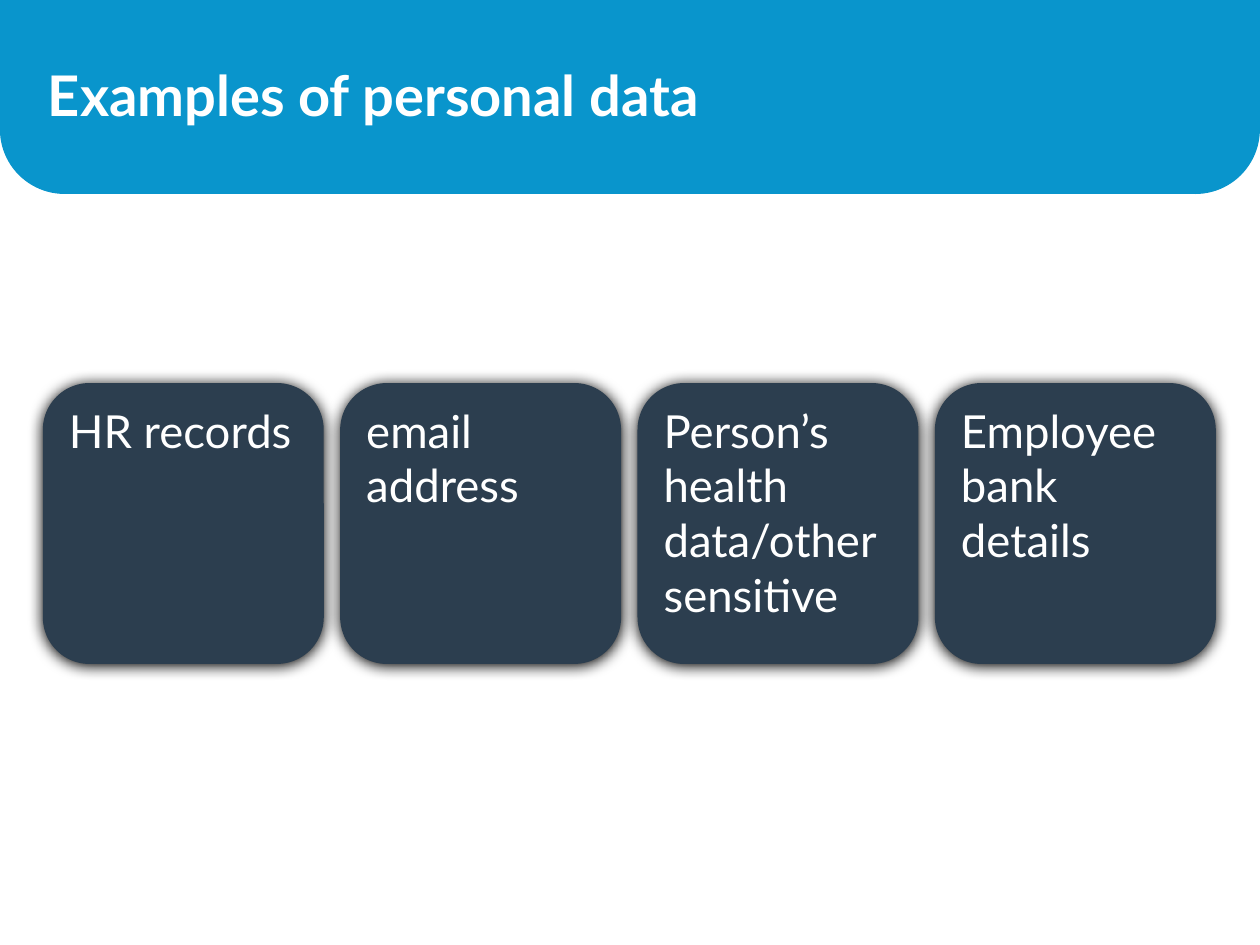
from dataclasses import dataclass

from lxml import etree
from pptx import Presentation
from pptx.dml.color import RGBColor
from pptx.enum.shapes import MSO_SHAPE
from pptx.enum.text import MSO_ANCHOR, PP_ALIGN
from pptx.oxml.ns import qn
from pptx.util import Inches, Pt

ROUND_TOP, ROUNDED = MSO_SHAPE.ROUND_2_SAME_RECTANGLE, MSO_SHAPE.ROUNDED_RECTANGLE
TOP, MIDDLE, LEFT = MSO_ANCHOR.TOP, MSO_ANCHOR.MIDDLE, PP_ALIGN.LEFT
TITLE_ONLY = 5


@dataclass(frozen=True)
class Theme:
    font: str = "Lato"
    banner: RGBColor = RGBColor(0x09, 0x95, 0xCC)
    card: RGBColor = RGBColor(0x2C, 0x3E, 0x4F)
    text: RGBColor = RGBColor(0xFF, 0xFF, 0xFF)
    shadow: str = "000000"
    title_size: int = 32
    card_size: int = 26


THEME = Theme()


def add_run(p, text, size, bold=False):
    p.alignment = LEFT
    r = p.add_run()
    r.text = text
    r.font.name, r.font.size, r.font.bold = THEME.font, Pt(size), bold
    r.font.color.rgb = THEME.text


def add_filled(slide, kind, box, color):
    sp = slide.shapes.add_shape(kind, *map(Inches, box))
    sp.fill.solid()
    sp.fill.fore_color.rgb = color
    sp.line.fill.background()
    sp.shadow.inherit = False
    return sp


def add_glow_shadow(sp):
    effects = sp._element.spPr.find(qn("a:effectLst"))
    shadow = etree.SubElement(effects, qn("a:outerShdw"), blurRad=str(Pt(8.5)),
                              dist=str(Pt(1)), dir=str(90 * 60000), rotWithShape="0")
    etree.SubElement(shadow, qn("a:srgbClr"), val=THEME.shadow)


def add_header(slide, box, text):
    x, y, w, h = box
    # Banner with rounded lower corners, behind the title
    banner = add_filled(slide, ROUND_TOP, box, THEME.banner)
    banner.adjustments[0] = 0.333
    xfrm = banner._element.spPr.find(qn("a:xfrm"))
    xfrm.set("flipH", "1")
    xfrm.set("flipV", "1")
    slide.shapes._spTree.insert(2, banner._element)

    # Title
    title = slide.shapes.title
    title.left, title.top = Inches(x + 0.28), Inches(y + 0.13)
    title.width, title.height = Inches(w - 0.57), Inches(h - 0.31)
    tf = title.text_frame
    tf.vertical_anchor = MIDDLE
    add_run(tf.paragraphs[0], text, THEME.title_size, bold=True)


def add_cards(slide, box, labels, gap):
    x, y, w, h = box
    side = (w - gap * (len(labels) - 1)) / len(labels)
    for i, label in enumerate(labels):
        sp = add_filled(slide, ROUNDED, (x + i * (side + gap), y, side, h), THEME.card)
        add_glow_shadow(sp)
        tf = sp.text_frame
        tf.word_wrap = True
        tf.vertical_anchor = TOP
        p = tf.paragraphs[0]
        p.level = 1
        p._p.get_or_add_pPr().set("marL", "0")
        add_run(p, label, THEME.card_size)


def main():
    prs = Presentation()
    prs.slide_width, prs.slide_height = Inches(10), Inches(7.5)
    slide = prs.slides.add_slide(prs.slide_layouts[TITLE_ONLY])
    add_header(slide, (0, 0, 10, 1.54), "Examples of personal data")
    add_cards(slide, (0.34, 3.04, 9.31, 2.23),
              ["HR records", "email address", "Person’s health data/other sensitive",
               "Employee bank details"], gap=0.13)
    prs.save("out.pptx")


if __name__ == "__main__":
    main()
